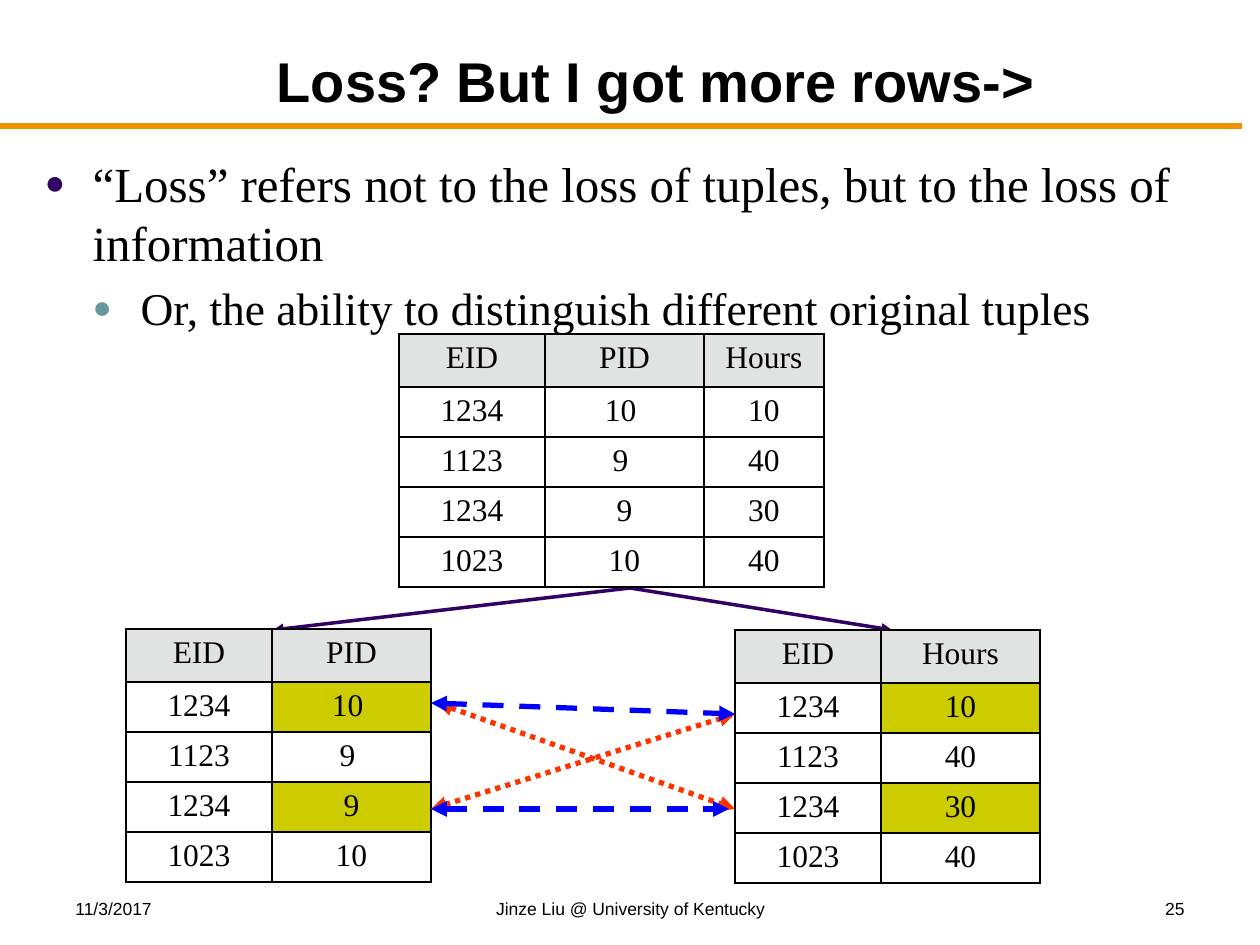
from lxml import etree
from pptx import Presentation
from pptx import util as u
from pptx.dml.color import RGBColor
from pptx.enum import dml, shapes, text
from pptx.oxml.ns import qn

PX = 914400 / 126
BLACK = RGBColor(0x00, 0x00, 0x00)
ORANGE = RGBColor(0xEF, 0x91, 0x00)
PURPLE = RGBColor(0x33, 0x00, 0x66)
TEAL = RGBColor(0x66, 0x99, 0x99)
GREY = RGBColor(0xE1, 0xE3, 0xE3)
OLIVE = RGBColor(0xCC, 0xCC, 0x00)
RED = RGBColor(0xFF, 0x33, 0x00)
BLUE = RGBColor(0x00, 0x00, 0xFF)
SANS, SERIF = "Arial", "Times New Roman"
EID_W, PID_W, HOURS_W = 146, 159, 120
HEAD_H, ROW_H = 53, 50


def px(n):
    return u.Emu(round(n * PX))


def sub(parent, tag, **attrs):
    return etree.SubElement(parent, qn(tag), attrs)


def style(p, size, font, align, bold=False):
    p.alignment = align
    for r in p.runs:
        f = r.font
        f.size, f.name, f.bold = u.Pt(size), font, bold
        f.color.rgb = BLACK


def place(sp, x, y, w, h):
    sp.left, sp.top, sp.width, sp.height = px(x), px(y), px(w), px(h)
    sp.text_frame.word_wrap = True
    sp.text_frame.auto_size = text.MSO_AUTO_SIZE.NONE


def add_line(s, start, end, color, width, dash=None, head=False, tail=False):
    c = s.shapes.add_connector(shapes.MSO_CONNECTOR.STRAIGHT,
                               *map(px, start + end))
    c.line.color.rgb = color
    c.line.width = u.Pt(width)
    if dash:
        c.line.dash_style = dash
    ln = c.line._get_or_add_ln()
    for on, tag in ((head, "a:headEnd"), (tail, "a:tailEnd")):
        if on:
            sub(ln, tag, type="triangle")
    sub(c._element.spPr, "a:effectLst")


def add_title(s, x, y, w, h):
    sp = s.shapes.title
    place(sp, x, y, w, h)
    tf = sp.text_frame
    tf.text = "Loss? But I got more rows->"
    tf.vertical_anchor = text.MSO_ANCHOR.BOTTOM
    style(tf.paragraphs[0], 32, SANS, text.PP_ALIGN.CENTER, True)


def add_bullets(s, x, y, w, h):
    sp = s.placeholders[1]
    place(sp, x, y, w, h)
    tf = sp.text_frame
    items = (
        ("“Loss” refers not to the loss of tuples, "
         "but to the loss of information", 28, PURPLE),
        ("Or, the ability to distinguish different original tuples", 26, TEAL),
    )
    for level, (words, size, color) in enumerate(items):
        p = tf.add_paragraph() if level else tf.paragraphs[0]
        p.text, p.level = words, level
        style(p, size, SERIF, text.PP_ALIGN.LEFT)
        p.space_before = u.Pt(size / 5)
        ppr = p._p.get_or_add_pPr()
        ppr.set("marL", str(px(48 * (level + 1))))
        ppr.set("indent", str(-px(48)))
        sub(sub(ppr, "a:buClr"), "a:srgbClr", val=str(color))
        sub(ppr, "a:buSzPct", val="70000")
        sub(ppr, "a:buFont", typeface=SANS)
        sub(ppr, "a:buChar", char="●")


def add_border(cell):
    tcpr = cell._tc.get_or_add_tcPr()
    for i, side in enumerate(("a:lnL", "a:lnR", "a:lnT", "a:lnB")):
        ln = etree.Element(qn(side), w=str(u.Pt(1)))
        sub(sub(ln, "a:solidFill"), "a:srgbClr", val=str(BLACK))
        tcpr.insert(i, ln)


def add_relation(s, x, y, widths, rows, marked=()):
    """Draw a relation; the last column of each row in marked is highlighted."""
    h = HEAD_H + ROW_H * (len(rows) - 1)
    t = s.shapes.add_table(len(rows), len(widths), px(x), px(y),
                           px(sum(widths)), px(h)).table
    t.first_row = t.horz_banding = False
    for col, w in zip(t.columns, widths):
        col.width = px(w)
    for i, values in enumerate(rows):
        t.rows[i].height = px(ROW_H if i else HEAD_H)
        for j, value in enumerate(values):
            cell = t.cell(i, j)
            cell.text = value
            p = cell.text_frame.paragraphs[0]
            style(p, 18, SERIF, text.PP_ALIGN.CENTER)
            p.space_before = u.Pt(3.6)
            highlighted = i in marked and j == len(widths) - 1
            if i == 0 or highlighted:
                cell.fill.solid()
                cell.fill.fore_color.rgb = OLIVE if highlighted else GREY
            else:
                cell.fill.background()
            add_border(cell)


def add_matches(s, x, y, w, h):
    """Join the highlighted rows: dotted for false pairs, dashed for true."""
    dot, dash = dml.MSO_LINE.ROUND_DOT, dml.MSO_LINE.DASH
    right, bottom = x + w, y + h
    for start, end, color, kind in (
        ((x + 6, y), (right, bottom), RED, dot),
        ((x, bottom), (right, y + 11), RED, dot),
        ((x, y), (right, y + 11), BLUE, dash),
        ((x, bottom), (right - 6, bottom), BLUE, dash),
    ):
        add_line(s, start, end, color, 3, kind, head=True, tail=True)


def add_footer(s, y, h):
    al = text.PP_ALIGN
    for words, x, w, align in (
        ("11/3/2017", 63, 294, al.LEFT),
        ("Jinze Liu @ University of Kentucky", 431, 399, al.CENTER),
        ("25", 903, 294, al.RIGHT),
    ):
        sp = s.shapes.add_textbox(0, 0, 0, 0)
        place(sp, x, y, w, h)
        sp.text_frame.text = words
        style(sp.text_frame.paragraphs[0], 10, SANS, align)


def main():
    prs = Presentation()
    prs.slide_width, prs.slide_height = px(1260), px(945)
    s = prs.slides.add_slide(prs.slide_layouts[1])
    add_line(s, (0, 126), (1242, 126), ORANGE, 3)
    add_footer(s, 892, 32)
    add_title(s, 136, 32, 1040, 88)
    add_bullets(s, 32, 147, 1187, 725)

    rows = [("EID", "PID", "Hours"), ("1234", "10 ", "10"),
            ("1123", "9 ", "40"), ("1234", "9", "30"), ("1023", "10", "40")]
    for end in ((273, 630), (892, 630)):
        add_line(s, (630, 588), end, PURPLE, 2, tail=True)
    add_relation(s, 399, 334, (EID_W, PID_W, HOURS_W), rows)
    add_relation(s, 126, 629, (EID_W, PID_W),
                 [(eid, pid) for eid, pid, _ in rows], (1, 3))
    add_relation(s, 735, 630, (EID_W, PID_W),
                 [(eid, hours) for eid, _, hours in rows], (1, 3))
    add_matches(s, 431, 703, 304, 106)
    prs.save("out.pptx")


if __name__ == "__main__":
    main()
